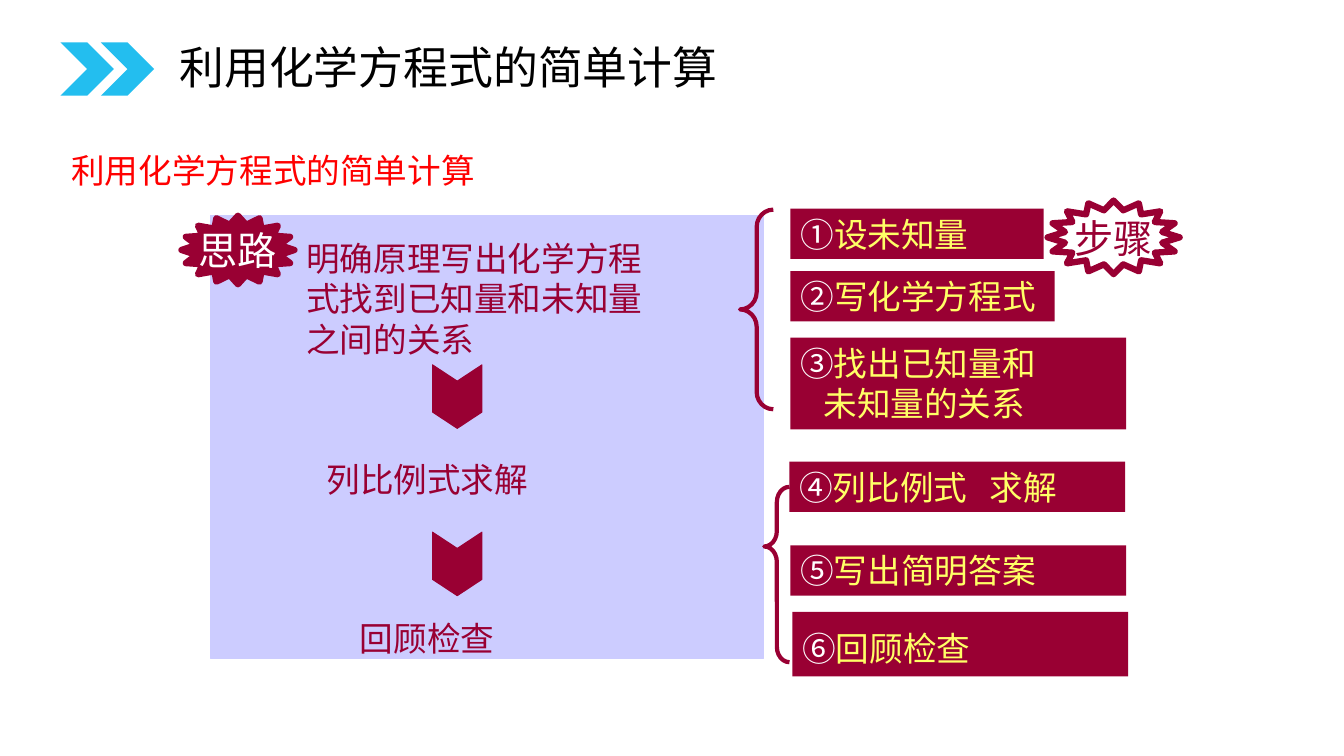
from lxml import etree
from pptx import Presentation
from pptx.dml.color import RGBColor
from pptx.enum import shapes as es, text as et
from pptx.oxml import ns
from pptx.util import Inches, Pt

WINE, LILAC, SKY = "990033", "CCCCFF", "23BEEF"
RED, WHITE, LEMON, BLACK = "FF0000", "FFFFFF", "FFFF66", "000000"
NOTO = "Noto Sans CJK SC"
HEAD = "利用化学方程式的简单计算"
LEAD = (0.61, 1.44, 4.61, 0.5)
PANEL = (2.09, 2.14, 5.48, 4.39)
IDEAS = [
    ("明确原理写出化学方程式找到已知量和未知量之间的关系", (2.94, 2.31, 3.6, 1.31)),
    ("列比例式求解", (3.14, 4.5, 2.85, 0.5)),
    ("回顾检查", (3.47, 6.08, 2.12, 0.5)),
]
ARROWS = [3.69, 5.35]
BRACES = [((7.34, 2.08, 0.33, 1.98), 0.52, 0.5), ((7.58, 4.83, 0.25, 1.74), 0.61, 0.34)]
STARS = [
    ("思路", (1.8, 2.14, 1.12, 0.68), WINE, WHITE),
    ("步骤", (10.39, 1.99, 1.31, 0.73), None, WINE),
]
STEPS = [
    ("①", ["设未知量"], (7.84, 2.07, 2.51, 0.5)),
    ("②", ["写化学方程式"], (7.84, 2.69, 2.62, 0.5)),
    ("③", ["找出已知量和", "未知量的关系"], (7.84, 3.35, 3.33, 0.91)),
    ("④", ["列比例式\t求解"], (7.83, 4.58, 3.33, 0.5)),
    ("⑤", ["写出简明答案"], (7.84, 5.41, 3.33, 0.5)),
    ("⑥", ["回顾检查"], (7.86, 6.07, 3.33, 0.64)),
]
INDENT, TAB = 0.23, 1.89

deck = Presentation()
deck.slide_width, deck.slide_height = Inches(13.33), Inches(7.5)
slide = deck.slides.add_slide(deck.slide_layouts[5])


def color(hue):
    return RGBColor.from_string(hue)


def place(item, box):
    item.left, item.top, item.width, item.height = map(Inches, box)


def shape(kind, box, fill=None, line=None, width=0.75, adj=()):
    item = slide.shapes.add_shape(kind, *map(Inches, box))
    item.shadow.inherit = False
    for i, val in enumerate(adj):
        item.adjustments[i] = val
    if fill:
        item.fill.solid()
        item.fill.fore_color.rgb = color(fill)
    else:
        item.fill.background()
    if line:
        item.line.color.rgb = color(line)
        item.line.width = Pt(width)
    else:
        item.line.fill.background()
    return item


def frame(item, anchor=et.MSO_ANCHOR.TOP, wrap=True):
    body = item.text_frame
    body.word_wrap = wrap
    body.auto_size = et.MSO_AUTO_SIZE.NONE
    body.vertical_anchor = anchor
    return body


def write(para, words, hue, size=24, face=NOTO):
    run = para.add_run()
    run.text = words
    font = run.font
    font.size, font.name = Pt(size), face
    font.color.rgb = color(hue)
    if face == NOTO:
        east = etree.SubElement(font._element, ns.qn("a:ea"))
        east.set("typeface", face)


def label(words, box, hue):
    body = frame(slide.shapes.add_textbox(*map(Inches, box)))
    write(body.paragraphs[0], words, hue)


for left in (0.6, 1):
    shape(es.MSO_SHAPE.CHEVRON, (left, 0.42, 0.53, 0.53), SKY)

title = slide.shapes.title
place(title, (1.68, 0.42, 6.69, 0.55))
para = frame(title, et.MSO_ANCHOR.MIDDLE).paragraphs[0]
para.alignment = et.PP_ALIGN.LEFT
para.line_spacing = 0.9
write(para, HEAD, BLACK, 32, "Arial")
label(HEAD, LEAD, RED)

shape(es.MSO_SHAPE.RECTANGLE, PANEL, LILAC, LILAC)
for box, curl, mid in BRACES:
    shape(es.MSO_SHAPE.LEFT_BRACE, box, None, WINE, 3, (curl, mid))
for words, box in IDEAS:
    label(words, box, WINE)
for top in ARROWS:
    arrow = shape(es.MSO_SHAPE.CHEVRON, (4.22, top, 0.63, 0.49), WINE, WINE, adj=(0.33,))
    arrow.rotation = 90

for mark, lines, box in STEPS:
    body = frame(shape(es.MSO_SHAPE.RECTANGLE, box, WINE))
    if box[3] == 0.64:
        body.vertical_anchor = et.MSO_ANCHOR.BOTTOM
        body.margin_bottom = Inches(0.08)
    for i, words in enumerate(lines):
        para = body.add_paragraph() if i else body.paragraphs[0]
        para.alignment = et.PP_ALIGN.LEFT
        prop = para._p.get_or_add_pPr()
        if i:
            prop.set("marL", str(Inches(INDENT)))
        else:
            write(para, mark, WHITE)
        if "\t" in words:
            tabs = etree.SubElement(prop, ns.qn("a:tabLst"))
            etree.SubElement(tabs, ns.qn("a:tab"), pos=str(Inches(TAB)), algn="l")
        write(para, words, LEMON)

for words, box, fill, hue in STARS:
    star = shape(es.MSO_SHAPE.STAR_16_POINT, box, fill, WINE, 4.5, (0.375,))
    para = frame(star, et.MSO_ANCHOR.MIDDLE, False).paragraphs[0]
    para.alignment = et.PP_ALIGN.CENTER
    write(para, words, hue, 28)

deck.save("out.pptx")
